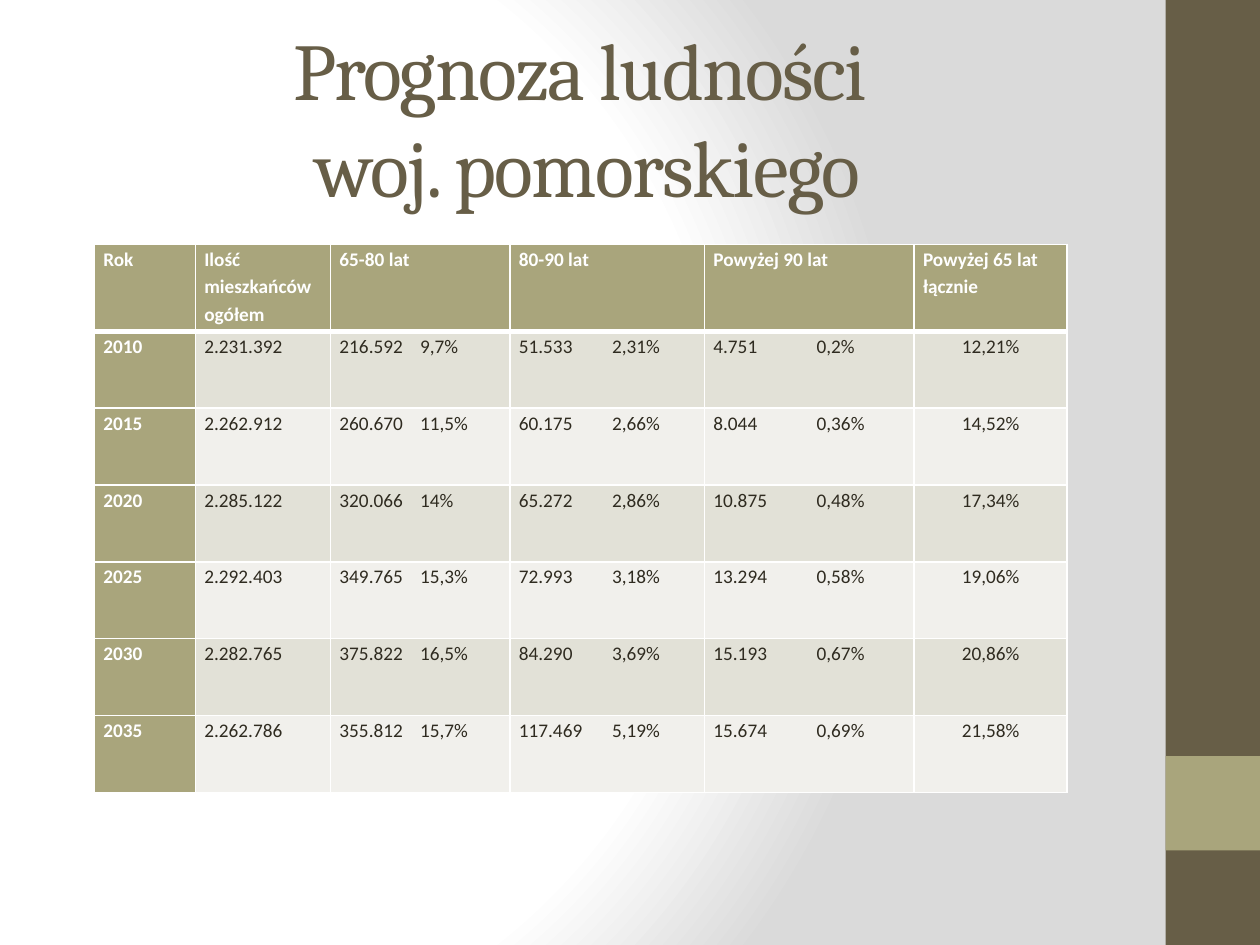
from dataclasses import dataclass

from lxml.etree import SubElement
from pptx import Presentation
from pptx.dml.color import RGBColor as RGB
from pptx.enum.shapes import MSO_SHAPE as Shape
from pptx.enum.text import MSO_ANCHOR as Anchor, PP_ALIGN as Align
from pptx.oxml import parse_xml
from pptx.oxml.ns import nsdecls, qn
from pptx.util import Inches, Pt


@dataclass(frozen=True)
class Theme:
    brown: str = "675E47"
    olive: str = "A9A57C"
    ink: str = "2F2B20"
    white: str = "FFFFFF"
    grey: str = "DADADA"
    bands: tuple = ("E2E1D7", "F1F0EC")
    title_font: str = "Cambria"
    body_font: str = "Calibri"
    title_size: int = 46
    body_size: int = 11


THEME = Theme()
TITLE = "Prognoza ludności \vwoj. pomorskiego"
HEADINGS = ("Rok", "Ilość mieszkańców ogółem", "65-80 lat", "80-90 lat",
            "Powyżej 90 lat", "Powyżej 65 lat łącznie")
# Year, total, then count and share for each age group, share above 65
FORECAST = (
    ("2010", "2.231.392", "216.592\t9,7%", "51.533\t2,31%", "4.751\t0,2%", "12,21%"),
    ("2015", "2.262.912", "260.670\t11,5%", "60.175\t2,66%", "8.044\t0,36%", "14,52%"),
    ("2020", "2.285.122", "320.066\t14%", "65.272\t2,86%", "10.875\t0,48%", "17,34%"),
    ("2025", "2.292.403", "349.765\t15,3%", "72.993\t3,18%", "13.294\t0,58%", "19,06%"),
    ("2030", "2.282.765", "375.822\t16,5%", "84.290\t3,69%", "15.193\t0,67%", "20,86%"),
    ("2035", "2.262.786", "355.812\t15,7%", "117.469\t5,19%", "15.674\t0,69%", "21,58%"),
)
COLUMN_WIDTHS = (0.8, 1.07, 1.42, 1.54, 1.66, 1.21)
SHARE_TABS = {2: 0.64, 3: 0.74, 4: 0.82}
HEADER_HEIGHT = 0.69


def style_font(font, name, size, color, bold=False):
    font.name, font.size, font.bold = name, Pt(size), bold
    font.color.rgb = RGB.from_string(color)


def paint_background(slide):
    """Radial white-to-grey wash."""
    stops = "".join(
        f'<a:gs pos="{position * 1000}"><a:srgbClr val="{color}"/></a:gs>'
        for position, color in ((0, THEME.white), (75, THEME.white), (100, THEME.grey)))
    wash = parse_xml(
        f'<a:gradFill {nsdecls("a")} rotWithShape="1"><a:gsLst>{stops}</a:gsLst>'
        '<a:path path="circle"><a:fillToRect l="20000" t="50000" r="100000" b="50000"/>'
        '</a:path></a:gradFill>')
    slide.background.fill.solid()
    solid = next(slide.element.iter(qn("a:solidFill")))
    solid.getparent().replace(solid, wash)


def add_side_band(slide, left, top, width, height):
    """Brown band with an olive square one square above its foot."""
    for y, block_height, color in ((top, height, THEME.brown),
                                   (top + height - 2 * width, width, THEME.olive)):
        block = slide.shapes.add_shape(
            Shape.RECTANGLE, Inches(left), Inches(y), Inches(width), Inches(block_height))
        block.shadow.inherit = False
        block.fill.solid()
        block.fill.fore_color.rgb = RGB.from_string(color)
        block.line.fill.background()


def add_title(slide, left, top, width, height):
    frame = slide.shapes.add_textbox(
        Inches(left), Inches(top), Inches(width), Inches(height)).text_frame
    frame.word_wrap = True
    frame.vertical_anchor = Anchor.MIDDLE
    heading = frame.paragraphs[0]
    heading.text = TITLE
    heading.alignment = Align.CENTER
    style_font(heading.font, THEME.title_font, THEME.title_size, THEME.brown)
    for run in heading.runs:
        run._r.get_or_add_rPr().set("spc", "-100")


def add_borders(cell, top, bottom):
    properties = cell._tc.get_or_add_tcPr()
    for side, points in (("L", 1), ("R", 1), ("T", top), ("B", bottom)):
        edge = SubElement(properties, qn(f"a:ln{side}"), w=str(Pt(points)))
        SubElement(SubElement(edge, qn("a:solidFill")), qn("a:srgbClr"), val=THEME.white)


def fill_cell(cell, text, row, column):
    is_heading = row == 0 or column == 0
    add_borders(cell, top=3 if row == 1 else 1, bottom=3 if row == 0 else 1)
    cell.fill.solid()
    cell.fill.fore_color.rgb = RGB.from_string(
        THEME.olive if is_heading else THEME.bands[(row - 1) % 2])
    cell.margin_left = cell.margin_right = Inches(0.07)
    cell.margin_top = cell.margin_bottom = 0

    entry = cell.text_frame.paragraphs[0]
    entry.text = text
    if row and column in SHARE_TABS:
        tabs = SubElement(entry._p.get_or_add_pPr(), qn("a:tabLst"))
        SubElement(tabs, qn("a:tab"), pos=str(Inches(SHARE_TABS[column])), algn="l")
    if row and column == len(HEADINGS) - 1:
        entry.alignment = Align.CENTER
    entry.line_spacing = 1.15
    entry.space_after = Pt(10)
    style_font(entry.font, THEME.body_font, THEME.body_size,
               THEME.white if is_heading else THEME.ink, is_heading)


def add_forecast_table(slide, left, top, width, height):
    lines = (HEADINGS, *FORECAST)
    table = slide.shapes.add_table(
        len(lines), len(HEADINGS),
        Inches(left), Inches(top), Inches(width), Inches(height)).table
    for column, share in zip(table.columns, COLUMN_WIDTHS):
        column.width = Inches(width * share / sum(COLUMN_WIDTHS))
    year_height = (height - HEADER_HEIGHT) / len(FORECAST)
    for row, line in enumerate(lines):
        table.rows[row].height = Inches(year_height if row else HEADER_HEIGHT)
        for column, text in enumerate(line):
            fill_cell(table.cell(row, column), text, row, column)


def main():
    deck = Presentation()
    deck.slide_width, deck.slide_height = Inches(10), Inches(7.5)
    slide = deck.slides.add_slide(deck.slide_layouts[6])
    paint_background(slide)
    add_side_band(slide, 9.25, 0, 0.75, 7.5)
    add_title(slide, 0.5, 0.3, 8.33, 1.25)
    add_forecast_table(slide, 0.75, 1.94, 7.72, 4.35)
    deck.save("out.pptx")


if __name__ == "__main__":
    main()
